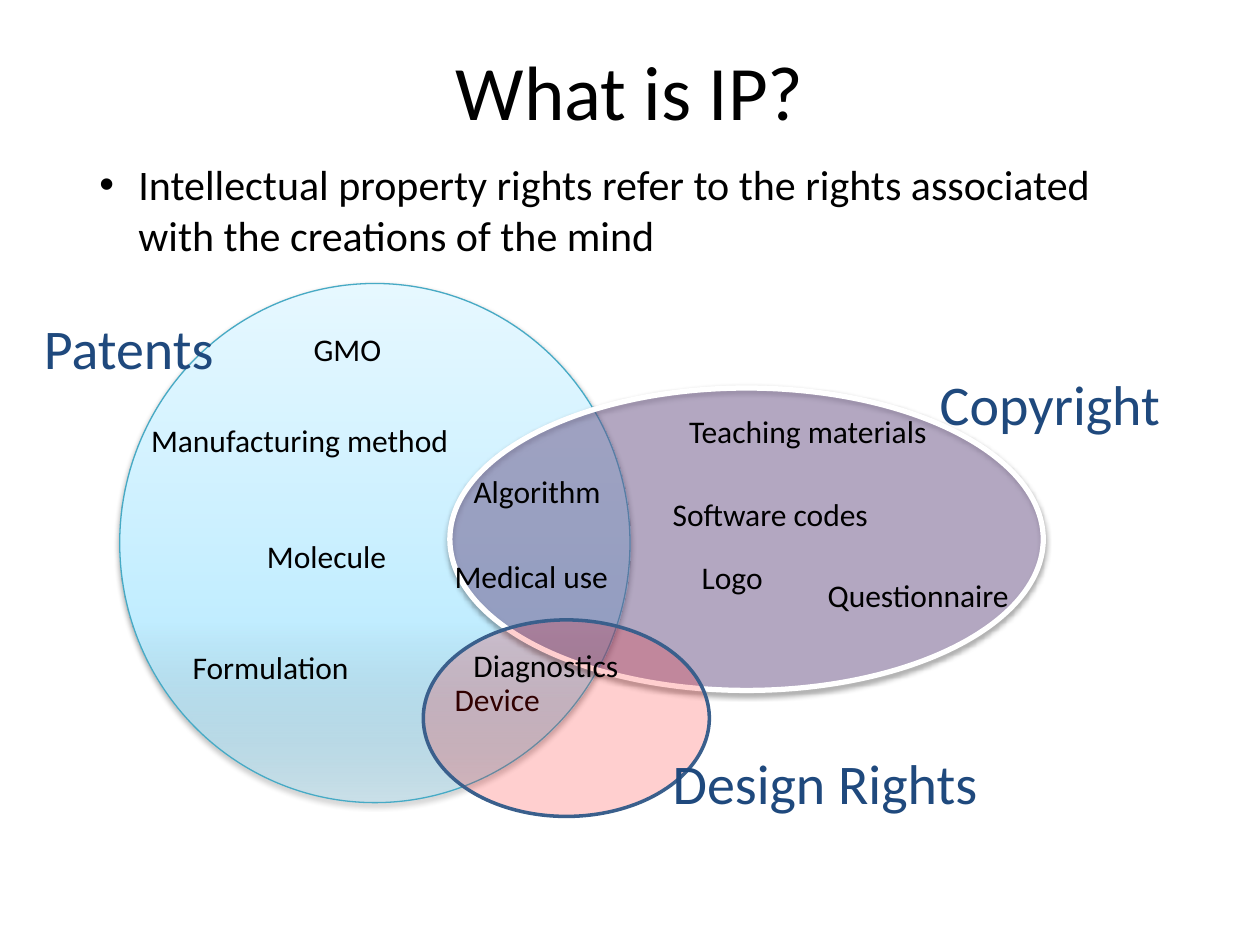
from dataclasses import dataclass

from pptx import Presentation
from pptx.dml.color import RGBColor
from pptx.enum.shapes import MSO_SHAPE
from pptx.enum.text import MSO_ANCHOR, MSO_AUTO_SIZE, PP_ALIGN
from pptx.oxml import parse_xml
from pptx.oxml.ns import nsdecls, qn
from pptx.util import Inches, Pt


@dataclass(frozen=True)
class Theme:
    font: str = "Calibri"
    title_size: int = 44
    body_size: int = 24
    heading_size: int = 32
    label_size: int = 18
    text: str = "000000"
    heading: str = "1F497D"
    patents_line: str = "46AAC5"
    patents_stops: tuple = ((0, "A7E6FF", 33), (35, "C1EDFF", 100), (100, "E7F8FF", 100))
    copyright_fill: str = "8064A2"
    copyright_line: str = "FFFFFF"
    design_fill: str = "FF0000"
    design_line: str = "3A5F8C"


theme = Theme()
presentation = Presentation()
presentation.slide_width = Inches(10)
presentation.slide_height = Inches(7.5)
slide = presentation.slides.add_slide(presentation.slide_layouts[6])


def add_ellipse(bounds, stops, line_color, line_width, shadowed):
    shape = slide.shapes.add_shape(MSO_SHAPE.OVAL, *map(Inches, bounds))
    shape.line.color.rgb = RGBColor.from_string(line_color)
    shape.line.width = Pt(line_width)
    properties = shape._element.spPr
    if len(stops) > 1:
        shape.fill.gradient()
        shape.fill.gradient_angle = 90
        stop_list = properties.find(".//" + qn("a:gsLst"))
        for stop in list(stop_list):
            stop_list.remove(stop)
        for position, color, opacity in stops:
            stop_list.append(parse_xml(
                f'<a:gs {nsdecls("a")} pos="{position * 1000}"><a:srgbClr val="{color}">'
                f'<a:alpha val="{opacity * 1000}"/></a:srgbClr></a:gs>'))
    else:
        position, color, opacity = stops[0]
        shape.fill.solid()
        shape.fill.fore_color.rgb = RGBColor.from_string(color)
        properties.find(qn("a:solidFill"))[0].append(
            parse_xml(f'<a:alpha {nsdecls("a")} val="{opacity * 1000}"/>'))
    shape.shadow.inherit = False
    if shadowed:
        properties.find(qn("a:effectLst")).append(parse_xml(
            f'<a:outerShdw {nsdecls("a")} blurRad="{Pt(3.1)}" dist="{Pt(1.6)}" dir="5400000" '
            'rotWithShape="0"><a:srgbClr val="000000"><a:alpha val="38000"/></a:srgbClr></a:outerShdw>'))


def add_text(text, bounds, size, color, wrap=False, grow=True):
    box = slide.shapes.add_textbox(*map(Inches, bounds))
    frame = box.text_frame
    frame.word_wrap = wrap
    frame.auto_size = MSO_AUTO_SIZE.SHAPE_TO_FIT_TEXT if grow else MSO_AUTO_SIZE.NONE
    frame.vertical_anchor = MSO_ANCHOR.TOP
    paragraph = frame.paragraphs[0]
    run = paragraph.add_run()
    run.text = text
    run.font.name = theme.font
    run.font.size = Pt(size)
    run.font.color.rgb = RGBColor.from_string(color)
    return paragraph


add_ellipse((0.95, 2.25, 4.05, 4.12), theme.patents_stops, theme.patents_line, 0.75, True)
add_ellipse((3.57, 3.08, 4.71, 2.4), ((0, theme.copyright_fill, 41),), theme.copyright_line, 3, True)

title = add_text("What is IP?", (0.5, 0.3, 9, 1.25), theme.title_size, theme.text, wrap=True, grow=False)
title.alignment = PP_ALIGN.CENTER

definition = add_text(
    "Intellectual property rights refer to the rights associated with the creations of the mind",
    (0.69, 1.21, 8.62, 0.91), theme.body_size, theme.text, wrap=True)
definition_properties = definition._p.get_or_add_pPr()
definition_properties.set("marL", str(Inches(0.31)))
definition_properties.set("indent", str(-Inches(0.31)))
definition_properties.append(parse_xml(f'<a:buFont {nsdecls("a")} typeface="Arial"/>'))
definition_properties.append(parse_xml(f'<a:buChar {nsdecls("a")} char="•"/>'))

examples = [
    ("Molecule", 2.02, 4.21, 1.16),
    ("Software codes", 5.24, 3.88, 1.78),
    ("Device", 3.51, 5.35, 0.89),
    ("Algorithm", 3.66, 3.7, 1.22),
    ("Formulation", 1.43, 5.09, 1.45),
    ("Medical use", 3.51, 4.37, 1.43),
    ("Questionnaire", 6.47, 4.52, 1.66),
    ("GMO", 2.39, 2.57, 0.74),
    ("Manufacturing method", 1.1, 3.29, 2.59),
    ("Logo", 5.47, 4.38, 0.69),
    ("Teaching materials", 5.37, 3.22, 2.19),
]
for text, left, top, width in examples:
    add_text(text, (left, top, width, 0.4), theme.label_size, theme.text)

add_ellipse((3.36, 4.92, 2.27, 1.56), ((0, theme.design_fill, 19),), theme.design_line, 2, False)
add_text("Diagnostics", (3.66, 5.08, 1.36, 0.4), theme.label_size, theme.text)

headings = [
    ("Patents", 0.25, 2.44, 1.56),
    ("Copyright", 7.36, 2.88, 1.97),
    ("Design Rights", 5.24, 5.89, 2.65),
]
for text, left, top, width in headings:
    add_text(text, (left, top, width, 0.64), theme.heading_size, theme.heading)

presentation.save("out.pptx")
